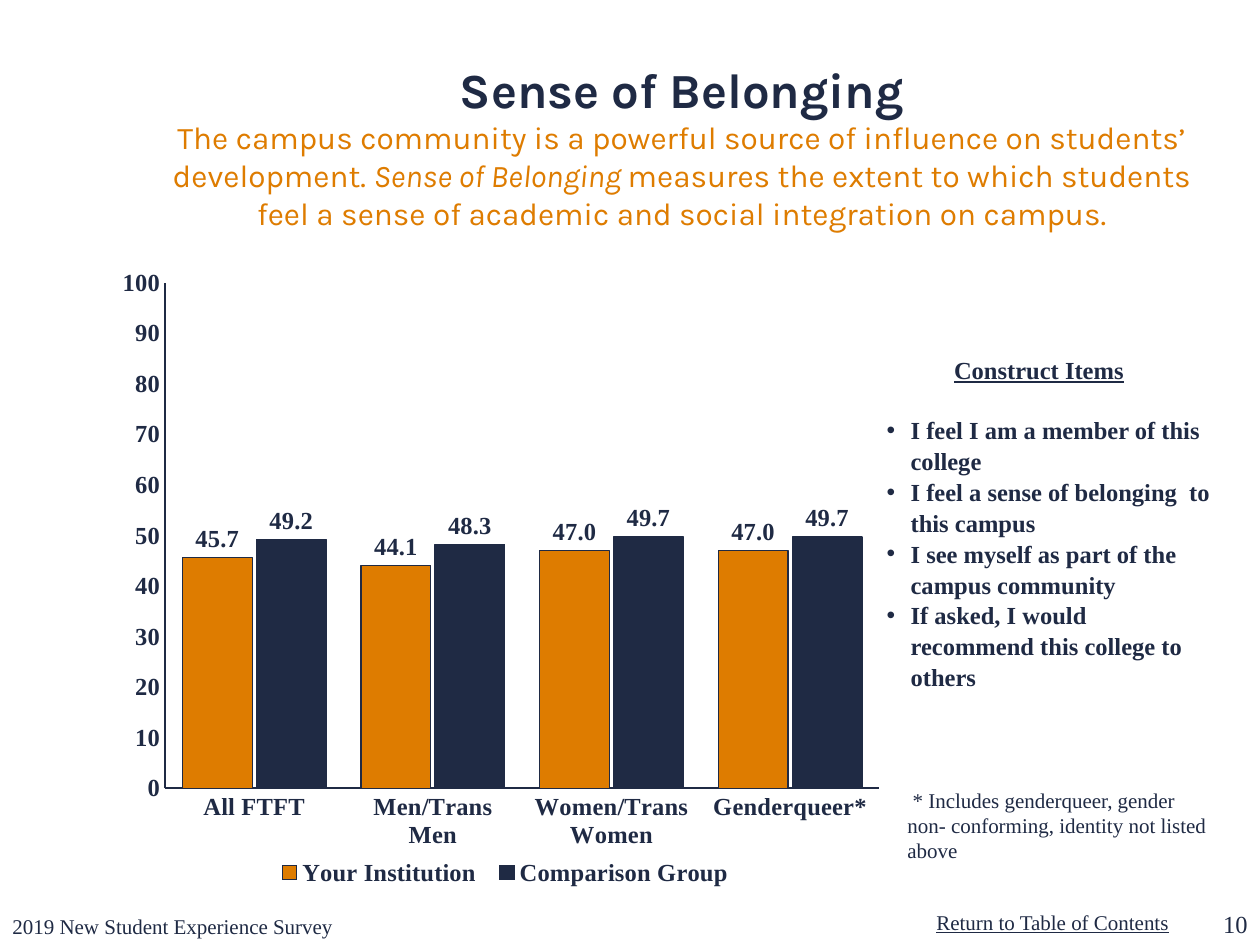
from copy import deepcopy
from lxml import etree
from pptx import Presentation
from pptx.chart.data import CategoryChartData as ChartData
from pptx.dml.color import RGBColor as RGB
from pptx.enum.chart import XL_CHART_TYPE as KIND, XL_LABEL_POSITION as SPOT
from pptx.enum.chart import XL_LEGEND_POSITION as SIDE, XL_TICK_MARK as TICK
from pptx.enum.text import MSO_ANCHOR as ANCHOR, MSO_AUTO_SIZE as FIT, PP_ALIGN as ALIGN
from pptx.oxml import parse_xml
from pptx.oxml.ns import nsdecls, qn
from pptx.util import Pt

PX = 7257  # EMU in one px, 126 px to the inch
NAVY, GOLD = "1F2A44", "DE7C00"
SERIF = "Times New Roman"


def paint(font, size, tint=NAVY, bold=False, name=SERIF):
    font.name, font.size, font.bold = name, Pt(size), bold
    font.color.rgb = RGB.from_string(tint)


def place(shape, left, top, width, height):
    shape.left, shape.top = left * PX, top * PX
    shape.width, shape.height = width * PX, height * PX


deck = Presentation()
deck.slide_width, deck.slide_height = 1260 * PX, 945 * PX
slide = deck.slides.add_slide(deck.slide_layouts[1])

# Title with its description
title = slide.shapes.title
place(title, 136, 53, 1092, 158)
frame = title.text_frame
frame.auto_size, frame.vertical_anchor = FIT.NONE, ANCHOR.TOP
para = frame.paragraphs[0]
para.alignment = ALIGN.CENTER
parts = [
    ("Sense of Belonging", 28, NAVY, True, False),
    ("The campus community is a powerful source of influence on students’ development. ",
     18, GOLD, False, False),
    ("Sense of Belonging ", 18, GOLD, False, True),
    ("measures the extent to which students feel a sense of academic and social "
     "integration on campus.", 18, GOLD, False, False),
]
for text, size, tint, bold, slant in parts:
    run = para.add_run()
    run.text = text
    paint(run.font, size, tint, bold, "Karla")
    run.font.italic = slant
    if bold:
        para.add_line_break()
        # The break takes the size of the heading
        para._p.find(qn("a:br")).append(deepcopy(run._r.rPr))

# Column chart
data = ChartData()
data.categories = ["All FTFT", "Men/Trans Men", "Women/Trans Women", "Genderqueer*"]
data.add_series("Your Institution", [45.7, 44.1, 47, 47])
data.add_series("Comparison Group", [49.2, 48.3, 49.7, 49.7])
chart = slide.shapes.add_chart(KIND.COLUMN_CLUSTERED, 63 * PX, 229 * PX,
                               1134 * PX, 674 * PX, data).chart
chart.has_title = False
paint(chart.font, 14, bold=True)
plot = chart.plots[0]
plot.gap_width, plot.overlap, plot.vary_by_categories = 50, -6, False

for row, tint in zip(plot.series, (GOLD, NAVY)):
    row.format.fill.solid()
    row.format.fill.fore_color.rgb = RGB.from_string(tint)
    row.format.line.color.rgb = RGB.from_string(NAVY)
    row.format.line.width = Pt(0.75)
    tags = row.data_labels
    tags.show_value, tags.position = True, SPOT.OUTSIDE_END
    tags.number_format, tags.number_format_is_linked = "0.0", False
    paint(tags.font, 14, bold=True)

for axis in (chart.category_axis, chart.value_axis):
    axis.major_tick_mark = axis.minor_tick_mark = TICK.NONE
    axis.has_major_gridlines = False
    axis.format.line.color.rgb = RGB.from_string(NAVY)
    axis.format.line.width = Pt(1)
    paint(axis.tick_labels.font, 14, bold=True)
scale = chart.value_axis
scale.minimum_scale, scale.maximum_scale, scale.major_unit = 0, 100, 10
scale.tick_labels.number_format = "#,##0"
scale.tick_labels.number_format_is_linked = False

chart.has_legend = True
legend = chart.legend
legend.position, legend.include_in_layout = SIDE.BOTTOM, False
paint(legend.font, 14, bold=True)

# Fixed places for the plot area and the legend
area = chart._chartSpace.chart.plotArea
for old in area.findall(qn("c:layout")):
    area.remove(old)
for host, spot, inner in ((area, (0.09, 0.08, 0.63, 0.75), True),
                          (legend._element, (0.18, 0.93, 0.42, 0.05), False)):
    layout = parse_xml(f"<c:layout {nsdecls('c')}><c:manualLayout/></c:layout>")
    marks = [("layoutTarget", "inner")] if inner else []
    marks += [("xMode", "edge"), ("yMode", "edge"), *zip("xywh", spot)]
    for tag, val in marks:
        etree.SubElement(layout[0], qn(f"c:{tag}")).set("val", str(val))
    if inner:
        host.insert(0, layout)
    else:
        for old in host.findall(qn("c:layout")):
            host.remove(old)
        host.find(qn("c:legendPos")).addnext(layout)

# Construct items
body = slide.placeholders[1]
place(body, 850, 347, 378, 398)
frame = body.text_frame
frame.auto_size = FIT.NONE
frame.text = "\n".join([
    "Construct Items",
    "I feel I am a member of this college",
    "I feel a sense of belonging  to this campus",
    "I see myself as part of the campus community",
    "If asked, I would  recommend this college to  others",
])
for i, para in enumerate(frame.paragraphs):
    props = para._p.get_or_add_pPr()
    props.set("marL", str(48 * PX if i else 0))
    props.set("indent", str(-24 * PX if i else 0))
    para.space_before, para.line_spacing = Pt(0), 1.05
    bullet = etree.SubElement(props, qn("a:buChar" if i else "a:buNone"))
    if i:
        bullet.set("char", "•")
    else:
        para.alignment, para.space_after = ALIGN.CENTER, Pt(17)
    paint(para.runs[0].font, 14, bold=True)
    para.runs[0].font.underline = i == 0

# Footnote and footer line
notes = [
    (" * Includes genderqueer, gender non- conforming, identity not listed above",
     (895, 781, 336, 63), 12, ALIGN.LEFT, ANCHOR.TOP),
    ("Return to Table of Contents", (924, 903, 261, 38), 12, ALIGN.LEFT, ANCHOR.TOP),
    ("2019 New Student Experience Survey", (0, 882, 399, 63), 12, ALIGN.LEFT, ANCHOR.BOTTOM),
    ("10", (1155, 882, 105, 63), 14, ALIGN.RIGHT, ANCHOR.BOTTOM),
]
for text, spot, size, align, anchor in notes:
    frame = slide.shapes.add_textbox(*(n * PX for n in spot)).text_frame
    frame.text = text
    frame.word_wrap, frame.vertical_anchor = True, anchor
    para = frame.paragraphs[0]
    para.alignment = align
    paint(para.runs[0].font, size)
    para.runs[0].font.underline = text.startswith("Return")

deck.save("out.pptx")
